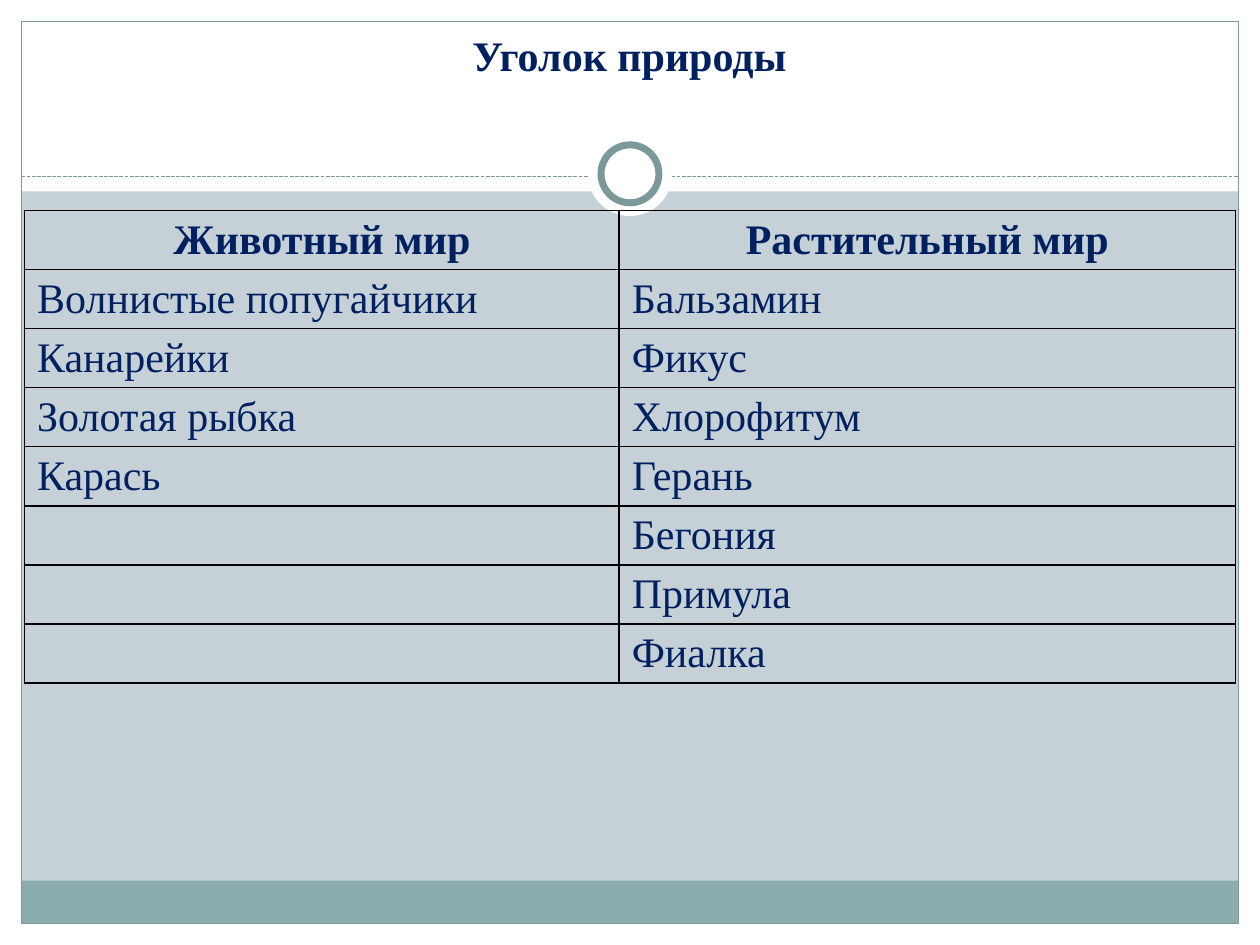
from itertools import zip_longest
from lxml.etree import SubElement
from pptx import Presentation
from pptx.dml.color import RGBColor
from pptx.enum.dml import MSO_LINE
from pptx.enum.shapes import MSO_CONNECTOR, MSO_SHAPE
from pptx.enum.text import MSO_ANCHOR, PP_ALIGN
from pptx.oxml.ns import qn
from pptx.util import Inches, Pt

COLORS = {"background": "C5D1D7", "white": "FFFFFF", "band": "8CADAE",
          "frame": "7C999A", "text": "002060", "border": "000000"}
COLUMNS, ROWS = 100, 75

deck = Presentation()
deck.slide_width, deck.slide_height = Inches(10), Inches(7.5)
column = deck.slide_width // COLUMNS
row = deck.slide_height // ROWS
page = deck.slides.add_slide(deck.slide_layouts[6])
page.background.fill.solid()
page.background.fill.fore_color.rgb = RGBColor.from_string(COLORS["background"])


def grid(left, top, width, height):
    return [round(left * column), round(top * row),
            round(width * column), round(height * row)]


def draw(kind, place, fill=None, line_width=None):
    shape = page.shapes.add_shape(kind, *grid(*place))
    shape.shadow.inherit = False
    if fill:
        shape.fill.solid()
        shape.fill.fore_color.rgb = RGBColor.from_string(COLORS[fill])
    else:
        shape.fill.background()
    if line_width:
        shape.line.color.rgb = RGBColor.from_string(COLORS["frame"])
        shape.line.width = Pt(line_width)
    else:
        shape.line.fill.background()


margin = 1.7
right, bottom = COLUMNS - margin, ROWS - margin
inner_width, inner_height = right - margin, bottom - margin
header_height = 15.2
band_height = 3.4
thin_line, ring_line = 0.75, 4

white_areas = [
    (0, bottom, COLUMNS, margin),
    (0, 0, COLUMNS, header_height),
    (0, 0, margin, ROWS),
    (right, 0, margin, ROWS),
]
for area in white_areas:
    draw(MSO_SHAPE.RECTANGLE, area, fill="white")
draw(MSO_SHAPE.RECTANGLE, (margin, bottom - band_height, inner_width, band_height),
     fill="band")
draw(MSO_SHAPE.RECTANGLE, (margin, margin, inner_width, inner_height),
     line_width=thin_line)

divider_left, divider_top, divider_width, _ = grid(margin, 14, inner_width, 0)
divider = page.shapes.add_connector(
    MSO_CONNECTOR.STRAIGHT, divider_left, divider_top,
    divider_left + divider_width, divider_top)
divider.line.color.rgb = RGBColor.from_string(COLORS["frame"])
for name, value in {"width": Pt(thin_line), "dash_style": MSO_LINE.SQUARE_DOT}.items():
    setattr(divider.line, name, value)
SubElement(divider.element.spPr, qn("a:effectLst"))

ring_middle = 13.8
for diameter, line_width in [(6.7, None), (4.6, ring_line)]:
    place = ((COLUMNS - diameter) / 2, ring_middle - diameter / 2, diameter, diameter)
    draw(MSO_SHAPE.OVAL, place, fill="white", line_width=line_width)

animals = ["Животный мир", "Волнистые попугайчики", "Канарейки",
           "Золотая рыбка", "Карась"]
plants = ["Растительный мир", "Бальзамин", "Фикус", "Хлорофитум",
          "Герань", "Бегония", "Примула", "Фиалка"]
table_rows = list(zip_longest(animals, plants, fillvalue=""))
widths = [47.2, 48.9]
row_height = 4.69
labels = []

table = page.shapes.add_table(
    len(table_rows), len(widths),
    *grid(1.95, 16.7, sum(widths), row_height * len(table_rows))).table
for table_column, width in zip(table.columns, widths):
    table_column.width = round(width * column)
for table_row in table.rows:
    table_row.height = round(row_height * row)

for row_index, names in enumerate(table_rows):
    is_header = row_index == 0
    align = PP_ALIGN.CENTER if is_header else PP_ALIGN.LEFT
    for column_index, text in enumerate(names):
        cell = table.cell(row_index, column_index)
        for name, share in {"margin_top": 0.5, "margin_bottom": 0.3}.items():
            setattr(cell, name, round(share * row))
        if text:
            labels.append((cell.text_frame.paragraphs[0], text, is_header, align))
        properties = cell._tc.get_or_add_tcPr()
        for side in ("lnL", "lnR", "lnT", "lnB"):
            border = SubElement(properties, qn(f"a:{side}"), w=str(Pt(1)))
            paint = SubElement(border, qn("a:solidFill"))
            SubElement(paint, qn("a:srgbClr"), val=COLORS["border"])
        cell.fill.background()

title = page.shapes.add_textbox(*grid(3.3, 1.95, 93.3, 4.8))
for name, value in {"word_wrap": True, "vertical_anchor": MSO_ANCHOR.MIDDLE}.items():
    setattr(title.text_frame, name, value)
labels.append((title.text_frame.paragraphs[0], "Уголок природы", True, PP_ALIGN.CENTER))

for paragraph, text, bold, align in labels:
    paragraph.alignment = align
    span = paragraph.add_run()
    span.text = text
    for name, value in {"size": Pt(24), "name": "Times New Roman", "bold": bold}.items():
        setattr(span.font, name, value)
    span.font.color.rgb = RGBColor.from_string(COLORS["text"])

deck.save("out.pptx")
